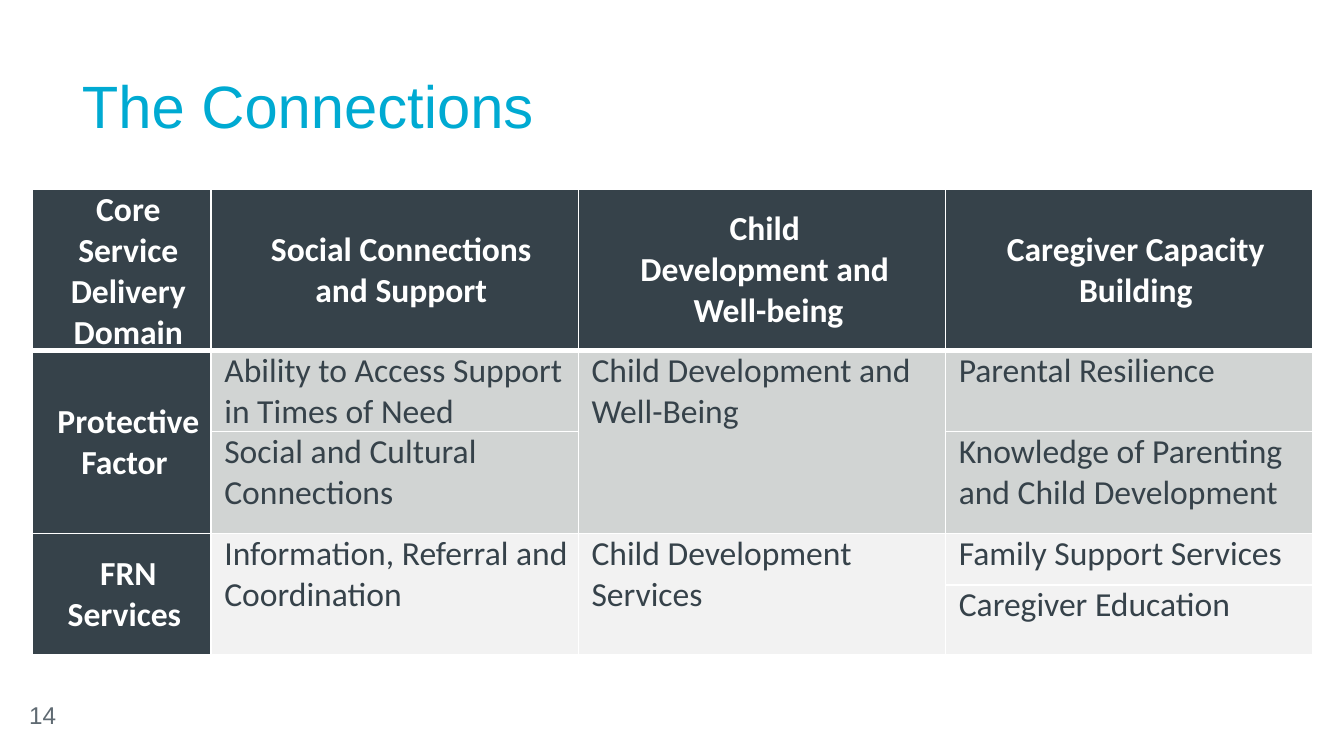
from dataclasses import dataclass

from lxml.etree import SubElement
from pptx import Presentation
from pptx.dml.color import RGBColor
from pptx.enum.text import MSO_ANCHOR, PP_ALIGN
from pptx.oxml.ns import qn
from pptx.util import Cm, Pt


@dataclass(frozen=True)
class Theme:
    dark: str = "36424A"
    accent: str = "00AAD2"
    muted: str = "5F6A72"
    white: str = "FFFFFF"
    factor_fill: str = "D1D4D3"
    service_fill: str = "F2F2F2"
    heading_font: str = "Arial"
    table_font: str = "Calibri"
    title_size: int = 32
    table_size: int = 18
    number_size: int = 13
    rule: int = 1
    heavy_rule: int = 3


THEME = Theme()

HEADINGS = [
    "Core Service Delivery Domain",
    "Social Connections\nand Support",
    "Child \nDevelopment and \nWell-being",
    "Caregiver Capacity\nBuilding",
]
# Each band: label, fill, and the entries under each domain (one or two rows)
BANDS = [
    ("Protective Factor ", THEME.factor_fill, [
        ["Ability to Access Support in Times of Need",
         "Social and Cultural Connections"],
        ["Child Development and Well-Being"],
        ["Parental Resilience",
         "Knowledge of Parenting and Child Development"],
    ]),
    ("FRN Services ", THEME.service_fill, [
        ["Information, Referral and Coordination"],
        ["Child Development Services"],
        ["Family Support Services", "Caregiver Education"],
    ]),
]
ROWS_PER_BAND = 2
COLUMN_WIDTHS = [3.38, 6.94, 6.94, 6.94]
ROW_HEIGHTS = [2.92, 1.45, 1.93, 0.97, 1.32]


def style_paragraph(paragraph, font, size, color, bold=False):
    paragraph.font.name = font
    paragraph.font.size = Pt(size)
    paragraph.font.bold = bold
    paragraph.font.color.rgb = RGBColor.from_string(color)


def add_line(slide, box, text, size, color, anchor):
    """Add one line of heading-font text in box."""
    frame = slide.shapes.add_textbox(*map(Cm, box)).text_frame
    frame.word_wrap = True
    frame.vertical_anchor = anchor
    frame.text = text
    style_paragraph(frame.paragraphs[0], THEME.heading_font, size, color)


def set_borders(cell, top, bottom):
    """Draw white rules, which must come before the fill in the cell XML."""
    properties = cell._tc.get_or_add_tcPr()
    widths = {"a:lnL": THEME.rule, "a:lnR": THEME.rule,
              "a:lnT": top, "a:lnB": bottom}
    for position, (edge, width) in enumerate(widths.items()):
        line = SubElement(properties, qn(edge), w=str(Pt(width)))
        fill = SubElement(line, qn("a:solidFill"))
        SubElement(fill, qn("a:srgbClr"), val=THEME.white)
        properties.insert(position, line)


def fill_cell(cell, text, fill, is_label=False):
    cell.margin_left = Cm(0.25)
    cell.margin_top = cell.margin_right = cell.margin_bottom = 0
    cell.vertical_anchor = MSO_ANCHOR.MIDDLE if is_label else MSO_ANCHOR.TOP
    cell.text = text
    for paragraph in cell.text_frame.paragraphs:
        paragraph.alignment = PP_ALIGN.CENTER if is_label else PP_ALIGN.LEFT
        style_paragraph(paragraph, THEME.table_font, THEME.table_size,
                        THEME.white if is_label else THEME.dark, is_label)
    cell.fill.solid()
    cell.fill.fore_color.rgb = RGBColor.from_string(fill)


def add_band(table, top_row, label, fill, domains):
    """Fill two rows, merging each column that has a single entry."""
    for column, entries in enumerate([[label]] + domains):
        if len(entries) == 1:
            table.cell(top_row, column).merge(
                table.cell(top_row + ROWS_PER_BAND - 1, column))
        is_label = column == 0
        for offset, entry in enumerate(entries):
            fill_cell(table.cell(top_row + offset, column), entry,
                      THEME.dark if is_label else fill, is_label)


def add_connections_table(slide, box):
    table = slide.shapes.add_table(
        len(ROW_HEIGHTS), len(COLUMN_WIDTHS), *map(Cm, box)).table
    for column, width in zip(table.columns, COLUMN_WIDTHS):
        column.width = Cm(width)
    for row, height in zip(table.rows, ROW_HEIGHTS):
        row.height = Cm(height)
    for column, heading in enumerate(HEADINGS):
        fill_cell(table.cell(0, column), heading, THEME.dark, is_label=True)
    for index, band in enumerate(BANDS):
        add_band(table, 1 + index * ROWS_PER_BAND, *band)
    for index, row in enumerate(table.rows):
        for cell in row.cells:
            set_borders(cell,
                        top=THEME.heavy_rule if index == 1 else THEME.rule,
                        bottom=THEME.heavy_rule if index == 0 else THEME.rule)


def main():
    presentation = Presentation()
    presentation.slide_width = Cm(25.4)
    presentation.slide_height = Cm(14.29)
    slide = presentation.slides.add_slide(presentation.slide_layouts[6])
    add_line(slide, (1.3, 1.22, 22.83, 1.57), "The Connections",
             THEME.title_size, THEME.accent, MSO_ANCHOR.BOTTOM)
    add_line(slide, (0.3, 13.13, 5.72, 0.76), "14",
             THEME.number_size, THEME.muted, MSO_ANCHOR.MIDDLE)
    add_connections_table(
        slide, (0.61, 3.58, sum(COLUMN_WIDTHS), sum(ROW_HEIGHTS)))
    presentation.save("out.pptx")


if __name__ == "__main__":
    main()
